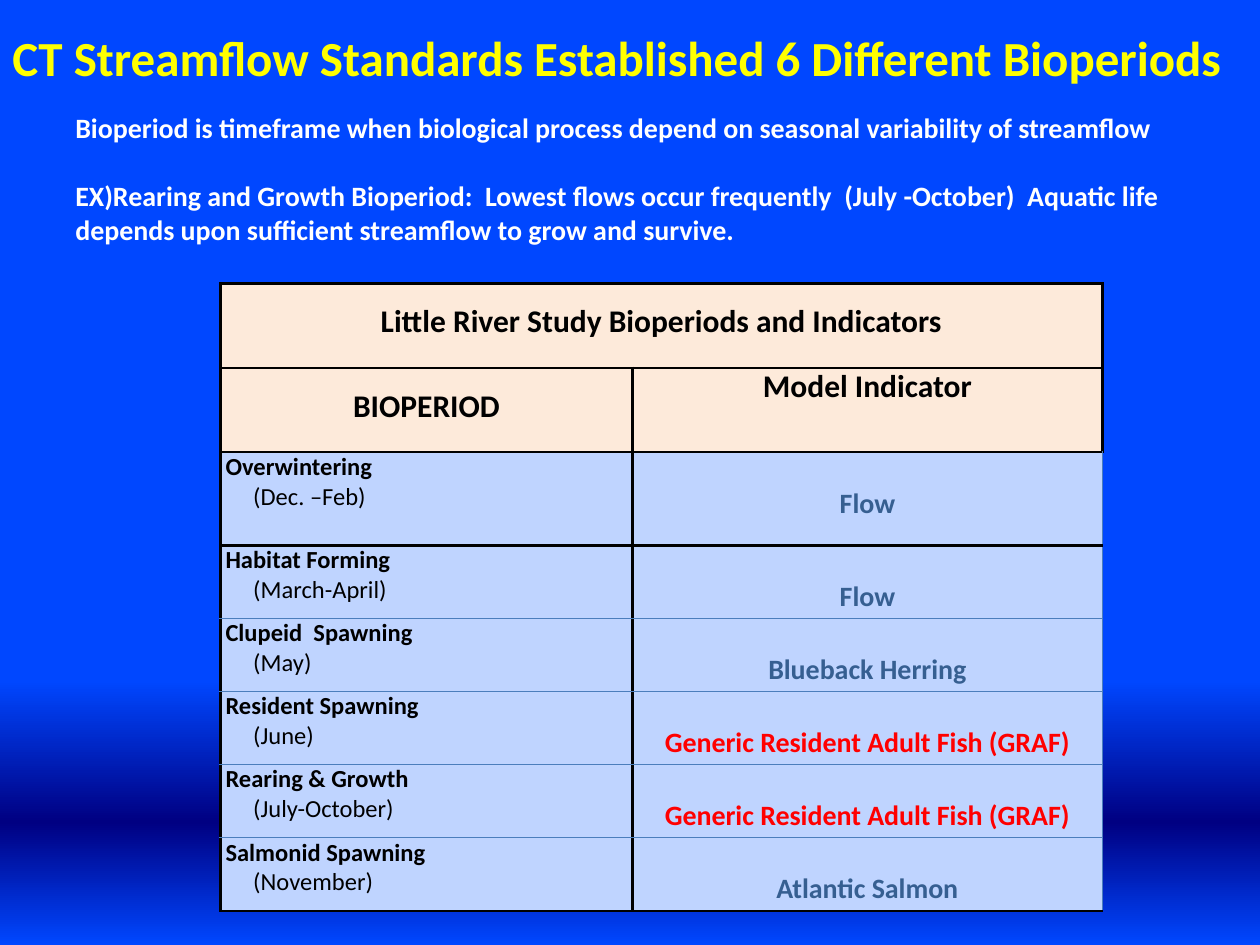
import pptx
import pptx.dml.color
import pptx.enum.text
import pptx.oxml
import pptx.oxml.ns
import pptx.util
from pptx.util import Inches

RGBColor = pptx.dml.color.RGBColor
ALIGN = pptx.enum.text.PP_ALIGN
BRIGHT_BLUE = RGBColor(0x00, 0x47, 0xFF)
NAVY = RGBColor(0x00, 0x00, 0x82)
YELLOW = RGBColor(0xFF, 0xFF, 0x00)
WHITE = RGBColor(0xFF, 0xFF, 0xFF)
BLACK = RGBColor(0x00, 0x00, 0x00)
RED = RGBColor(0xFF, 0x00, 0x00)
STEEL = RGBColor(0x36, 0x5F, 0x91)
RULE_BLUE = RGBColor(0x4B, 0x7E, 0xBC)
PEACH = RGBColor(0xFD, 0xEA, 0xDA)
PALE_BLUE = RGBColor(0xBF, 0xD4, 0xFF)

HEAVY = (BLACK, 1.5)
LIGHT = (RULE_BLUE, 0.75)

BIOPERIODS = [
    ("Overwintering", "(Dec. –Feb)", "Flow", STEEL),
    ("Habitat Forming", "(March-April)", "Flow", STEEL),
    ("Clupeid  Spawning", "(May)", "Blueback Herring", STEEL),
    ("Resident Spawning", "(June)", "Generic Resident Adult Fish (GRAF)", RED),
    ("Rearing & Growth", "(July-October)", "Generic Resident Adult Fish (GRAF)", RED),
    ("Salmonid Spawning", "(November)", "Atlantic Salmon", STEEL),
]


def write(frame, text, size, color, bold=True, align=ALIGN.LEFT, line=None, before=None, indent=None):
    """Fill the first paragraph of the frame, or add another one after it."""
    paragraph = frame.paragraphs[0]
    if paragraph.runs:
        paragraph = frame.add_paragraph()
    paragraph.alignment = align
    if line:
        paragraph.line_spacing = line
    if before:
        paragraph.space_before = pptx.util.Pt(before)
    if indent:
        paragraph._p.get_or_add_pPr().set("marL", str(Inches(indent)))
    run = paragraph.add_run()
    run.text = text
    run.font.name = "Calibri"
    run.font.size = pptx.util.Pt(size)
    run.font.bold = bold
    run.font.color.rgb = color


def set_background(slide):
    stops = "".join(
        f'<a:gs pos="{percent * 1000}"><a:srgbClr val="{color}"/></a:gs>'
        for percent, color in ((72, BRIGHT_BLUE), (87, NAVY), (100, BRIGHT_BLUE))
    )
    fill = slide.background.fill
    fill.gradient()
    gradient = slide.background._cSld.bg.bgPr.find(pptx.oxml.ns.qn("a:gradFill"))
    for child in list(gradient):
        gradient.remove(child)
    namespace = pptx.oxml.ns.nsdecls("a")
    gradient.append(pptx.oxml.parse_xml(f"<a:gsLst {namespace}>{stops}</a:gsLst>"))
    gradient.append(pptx.oxml.parse_xml(f'<a:lin {namespace} ang="5400000" scaled="0"/>'))


def add_text_frame(slide, left, top, width, height):
    box = slide.shapes.add_textbox(Inches(left), Inches(top), Inches(width), Inches(height))
    box.text_frame.word_wrap = True
    return box.text_frame


def add_title(slide, left, top, width, height):
    frame = add_text_frame(slide, left, top, width, height)
    write(frame, "CT Streamflow Standards Established 6 Different Bioperiods", 28, YELLOW)


def add_introduction(slide, left, top, width, height):
    frame = add_text_frame(slide, left, top, width, height)
    write(frame, "Bioperiod is timeframe when biological process depend on seasonal "
          "variability of streamflow", 16, WHITE)
    write(frame, "EX)Rearing and Growth Bioperiod:  Lowest flows occur frequently  "
          "(July -October)  Aquatic life depends upon sufficient streamflow to grow and survive.",
          16, WHITE, before=19.5)


def style_cell(cell, fill, left, right, top, bottom):
    cell.margin_left = cell.margin_right = Inches(0.04)
    cell.margin_top = cell.margin_bottom = 0
    properties = cell._tc.get_or_add_tcPr()
    for tag, (color, width) in (("lnL", left), ("lnR", right), ("lnT", top), ("lnB", bottom)):
        properties.append(pptx.oxml.parse_xml(
            f'<a:{tag} {pptx.oxml.ns.nsdecls("a")} w="{pptx.util.Pt(width)}">'
            f'<a:solidFill><a:srgbClr val="{color}"/></a:solidFill></a:{tag}>'))
    cell.fill.solid()
    cell.fill.fore_color.rgb = fill


def add_bioperiod_table(slide, left, top, width, height):
    header_height, first_height = 0.67, 0.74
    body_height = (height - 2 * header_height - first_height) / (len(BIOPERIODS) - 1)
    heights = [header_height] * 2 + [first_height] + [body_height] * (len(BIOPERIODS) - 1)
    first_width = 3.27
    table = slide.shapes.add_table(len(heights), 2, Inches(left), Inches(top),
                                   Inches(width), Inches(height)).table
    table.first_row = table.horz_banding = False
    for column, column_width in zip(table.columns, (first_width, width - first_width)):
        column.width = Inches(column_width)
    for row, row_height in zip(table.rows, heights):
        row.height = Inches(row_height)

    # Two header rows, the upper one merged
    for row in range(2):
        for column in range(2):
            style_cell(table.cell(row, column), PEACH, HEAVY, HEAVY, HEAVY, HEAVY)
    table.cell(0, 0).merge(table.cell(0, 1))
    headings = ((0, 0, "Little River Study Bioperiods and Indicators", 1.5),
                (1, 0, "BIOPERIOD", 1.5), (1, 1, "Model Indicator", None))
    for row, column, text, line in headings:
        write(table.cell(row, column).text_frame, text, 18, BLACK, align=ALIGN.CENTER, line=line)

    # One row per bioperiod; heavy rules close the first and last rows
    last = len(BIOPERIODS) - 1
    for index, (name, months, indicator, color) in enumerate(BIOPERIODS):
        period_cell, indicator_cell = table.cell(index + 2, 0), table.cell(index + 2, 1)
        upper = HEAVY if index in (0, 1) else LIGHT
        lower = HEAVY if index in (0, last) else LIGHT
        style_cell(period_cell, PALE_BLUE, HEAVY, HEAVY, upper, lower)
        style_cell(indicator_cell, PALE_BLUE, HEAVY, LIGHT, upper, lower)
        write(period_cell.text_frame, name, 14, BLACK)
        write(period_cell.text_frame, months, 14, BLACK, bold=False, indent=0.22)
        write(indicator_cell.text_frame, indicator, 16, color, align=ALIGN.CENTER, line=2.0)


def main():
    presentation = pptx.Presentation()
    presentation.slide_width = Inches(10)
    presentation.slide_height = Inches(7.5)
    slide = presentation.slides.add_slide(presentation.slide_layouts[6])
    set_background(slide)
    add_title(slide, 0, 0.17, 10.75, 1.78)
    add_introduction(slide, 0.5, 0.83, 9.33, 1.18)
    add_bioperiod_table(slide, 1.75, 2.25, 7, 4.98)
    presentation.save("out.pptx")


if __name__ == "__main__":
    main()
